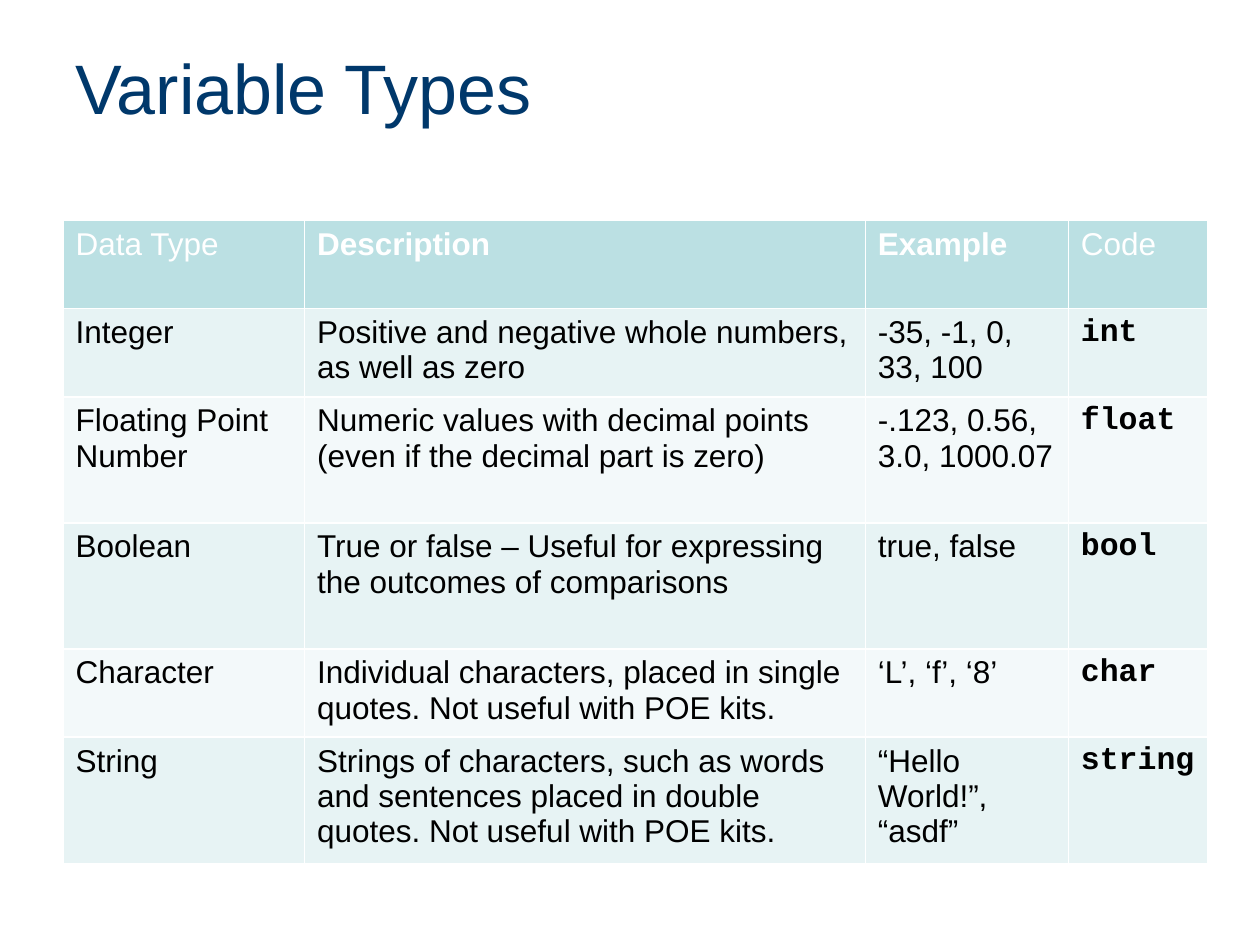
from lxml import etree
from pptx import Presentation
from pptx.dml.color import RGBColor
from pptx.enum import text
from pptx.oxml import ns
from pptx.util import Pt

TITLE = "Variable Types"
HEAD = ("Data Type", "Description", "Example", "Code")
TYPES = [
    ("Integer", "Positive and negative whole numbers, as well as zero",
     "-35, -1, 0, 33, 100", "int"),
    ("Floating Point Number",
     "Numeric values with decimal points (even if the decimal part is zero)",
     "-.123, 0.56, 3.0, 1000.07", "float"),
    ("Boolean",
     "True or false – Useful for expressing the outcomes of comparisons",
     "true, false", "bool"),
    ("Character",
     "Individual characters, placed in single quotes. Not useful with POE kits.",
     "‘L’, ‘f’, ‘8’", "char"),
    ("String",
     "Strings of characters, such as words and sentences placed in double "
     "quotes. Not useful with POE kits.",
     "“Hello World!”, “asdf”", "string"),
]
BOLD_HEADS = ("Description", "Example")
CODE_COL = len(HEAD) - 1

THEME = {
    "title": "00386B", "head": "BBE0E3", "bands": ("E7F3F4", "F3F9FA"),
    "light": "FFFFFF", "dark": "000000",
    "sans": "Arial", "mono": "Courier New",
    "title_size": 40, "size": 18, "rule": 1,
}
LEFT = 36
COLS = (138, 320.5, 116, 79.5)
LOW, TALL = 50.4, 72
ROWS = (LOW, LOW, TALL, TALL, LOW, TALL)


def style(para, face, size, color, bold=False):
    font = para.font
    font.name, font.size, font.bold = face, Pt(size), bold
    font.color.rgb = RGBColor.from_string(color)


def border(cell):
    """Rule all four sides; lines must come before the fill in tcPr."""
    props = cell._tc.get_or_add_tcPr()
    for i, side in enumerate(("lnL", "lnR", "lnT", "lnB")):
        line = etree.Element(ns.qn("a:" + side), w=str(Pt(THEME["rule"])))
        fill = etree.SubElement(line, ns.qn("a:solidFill"))
        etree.SubElement(fill, ns.qn("a:srgbClr"), val=THEME["light"])
        props.insert(i, line)


def add_title(slide):
    box = slide.shapes.add_textbox(Pt(LEFT), Pt(21.6), Pt(648), Pt(56))
    frame = box.text_frame
    frame.word_wrap = True
    frame.vertical_anchor = text.MSO_ANCHOR.MIDDLE
    frame.text = TITLE
    style(frame.paragraphs[0], THEME["sans"], THEME["title_size"], THEME["title"])


def add_types(slide):
    data = [HEAD] + TYPES
    table = slide.shapes.add_table(
        len(data), len(HEAD), Pt(LEFT), Pt(126), Pt(sum(COLS)), Pt(sum(ROWS))
    ).table
    for col, width in zip(table.columns, COLS):
        col.width = Pt(width)
    for row, height in zip(table.rows, ROWS):
        row.height = Pt(height)
    for r, row in enumerate(data):
        top = r == 0
        back = THEME["head"] if top else THEME["bands"][(r - 1) % 2]
        color = THEME["light"] if top else THEME["dark"]
        for c, words in enumerate(row):
            cell = table.cell(r, c)
            cell.text = words
            cell.fill.solid()
            cell.fill.fore_color.rgb = RGBColor.from_string(back)
            border(cell)
            code = c == CODE_COL and not top
            bold = code or (top and words in BOLD_HEADS)
            face = THEME["mono"] if code else THEME["sans"]
            style(cell.text_frame.paragraphs[0], face, THEME["size"], color, bold)


def main():
    deck = Presentation()
    deck.slide_width, deck.slide_height = Pt(720), Pt(540)
    slide = deck.slides.add_slide(deck.slide_layouts[6])
    add_title(slide)
    add_types(slide)
    deck.save("out.pptx")


if __name__ == "__main__":
    main()
